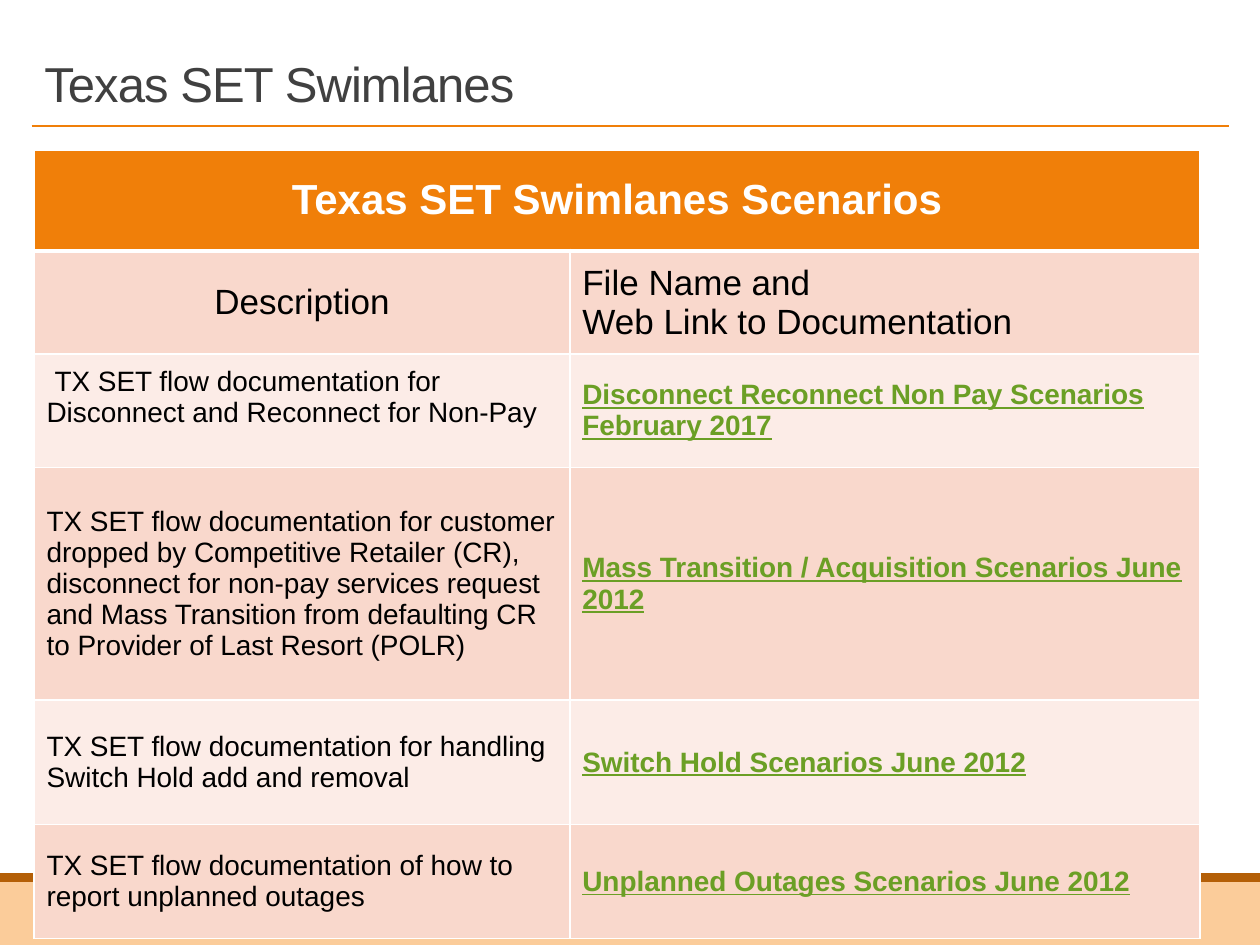
from lxml.etree import SubElement
from pptx import Presentation
from pptx.dml.color import RGBColor
from pptx.enum.shapes import MSO_CONNECTOR as CONN, MSO_SHAPE as SHAPE
from pptx.enum.text import MSO_ANCHOR as ANCHOR, MSO_AUTO_SIZE as AUTO, PP_ALIGN as ALIGN
from pptx.oxml import parse_xml
from pptx.oxml.ns import nsdecls, qn
from pptx.util import Cm, Pt

# Content
TITLE = "Texas SET Swimlanes"
HEADING = "Texas SET Swimlanes Scenarios"
COLUMNS = ("Description", "File Name and\nWeb Link to Documentation")
SCENARIOS = [
    ("TX SET flow documentation for Disconnect and Reconnect for Non-Pay",
     "Disconnect Reconnect Non Pay Scenarios February 2017"),
    ("TX SET flow documentation for customer dropped by Competitive Retailer (CR), "
     "disconnect for non-pay services request and Mass Transition from defaulting CR "
     "to Provider of Last Resort (POLR)",
     "Mass Transition / Acquisition Scenarios June 2012"),
    ("TX SET flow documentation for handling Switch Hold add and removal",
     "Switch Hold Scenarios June 2012"),
    ("TX SET flow documentation of how to report unplanned outages",
     "Unplanned Outages Scenarios June 2012"),
]

# Layout in cm, and formats
COL_WIDTHS = (10.8, 12.7)
ROW_HEIGHTS = (2.04, 1.83, 2.29, 4.69, 2.51, 2.29)
BANDS = [(17.78, 1.27, "FBCC9A"), (17.6, 0.18, "B45F07")]
ORANGE, WHITE = "F07F09", "FFFFFF"
ROW_FILLS = ("F9D8CC", "FCECE7")
TITLE_FONT = dict(name="Arial", size=Pt(28), color="404040")
HEAD_FONT = dict(name="Arial", size=Pt(24), bold=True, color=WHITE)
COLUMN_FONT = dict(name="Arial", size=Pt(20), bold=False, color="000000")
TEXT_FONT = dict(COLUMN_FONT, size=Pt(16))
LINK_FONT = dict(TEXT_FONT, bold=True, underline=True, color="6B9F25")


def rgb(value):
    return RGBColor.from_string(value)


def set_font(font, style):
    for key, value in style.items():
        if key == "color":
            font.color.rgb = rgb(value)
        else:
            setattr(font, key, value)


def set_borders(cell, bottom=1):
    tc_pr = cell._tc.get_or_add_tcPr()
    widths = dict(lnL=1, lnR=1, lnT=1, lnB=bottom)
    for i, (tag, width) in enumerate(widths.items()):
        tc_pr.insert(i, parse_xml(
            f'<a:{tag} {nsdecls("a")} w="{Pt(width)}"><a:solidFill>'
            f'<a:srgbClr val="{WHITE}"/></a:solidFill></a:{tag}>'))


def fill_cell(cell, text, style, fill, align=ALIGN.LEFT, bottom=1):
    cell.fill.solid()
    cell.fill.fore_color.rgb = rgb(fill)
    set_borders(cell, bottom)
    cell.vertical_anchor = ANCHOR.MIDDLE
    for side in ("left", "right", "top", "bottom"):
        setattr(cell, f"margin_{side}", Cm(0.25))
    cell.text_frame.text = text
    for p in cell.text_frame.paragraphs:
        p.alignment = align
        for r in p.runs:
            set_font(r.font, style)


def add_background(s):
    for top, height, color in BANDS:
        sp = s.shapes.add_shape(SHAPE.RECTANGLE, 0, Cm(top), Cm(25.4), Cm(height))
        sp.shadow.inherit = False
        sp.fill.solid()
        sp.fill.fore_color.rgb = rgb(color)
        sp.line.fill.background()
    rule = s.shapes.add_connector(CONN.STRAIGHT, Cm(0.64), Cm(2.54), Cm(24.77), Cm(2.54))
    rule.line.color.rgb = rgb(ORANGE)
    rule.line.width = Pt(1)
    SubElement(rule._element.spPr, qn("a:effectLst"))


def add_title(s):
    sp = s.shapes.title
    sp.left, sp.top, sp.width, sp.height = Cm(0.64), Cm(0.64), Cm(20.96), Cm(1.75)
    tf = sp.text_frame
    tf.text = TITLE
    tf.auto_size = AUTO.NONE
    tf.vertical_anchor = ANCHOR.BOTTOM
    p = tf.paragraphs[0]
    p.alignment, p.line_spacing = ALIGN.LEFT, 0.85
    r = p.runs[0]
    set_font(r.font, TITLE_FONT)
    r.font._element.set("spc", "-50")


def add_scenarios(s):
    table = s.shapes.add_table(len(ROW_HEIGHTS), len(COL_WIDTHS), Cm(0.69), Cm(3.02),
                               Cm(sum(COL_WIDTHS)), Cm(sum(ROW_HEIGHTS))).table
    for column, width in zip(table.columns, COL_WIDTHS):
        column.width = Cm(width)
    for row, height in zip(table.rows, ROW_HEIGHTS):
        row.height = Cm(height)

    # Heading across both columns
    head = table.cell(0, 0)
    head.merge(table.cell(0, 1))
    fill_cell(head, HEADING, HEAD_FONT, ORANGE, ALIGN.CENTER, bottom=3)
    set_borders(table.cell(0, 1), bottom=3)

    # Column names, then one banded row per scenario
    for i, texts in enumerate([COLUMNS] + SCENARIOS):
        styles = (TEXT_FONT, LINK_FONT) if i else (COLUMN_FONT, COLUMN_FONT)
        for j, (text, style) in enumerate(zip(texts, styles)):
            align = ALIGN.CENTER if i == j == 0 else ALIGN.LEFT
            fill_cell(table.cell(i + 1, j), text, style, ROW_FILLS[i % 2], align)

    # First scenario sits at the top with a small first-line indent
    first = table.cell(2, 0)
    first.vertical_anchor = ANCHOR.TOP
    first.text_frame.paragraphs[0]._p.get_or_add_pPr().set("indent", str(Cm(0.16)))


def main():
    prs = Presentation()
    prs.slide_width, prs.slide_height = Cm(25.4), Cm(19.05)
    s = prs.slides.add_slide(prs.slide_layouts[5])
    add_background(s)
    add_title(s)
    add_scenarios(s)
    prs.save("out.pptx")


if __name__ == "__main__":
    main()
